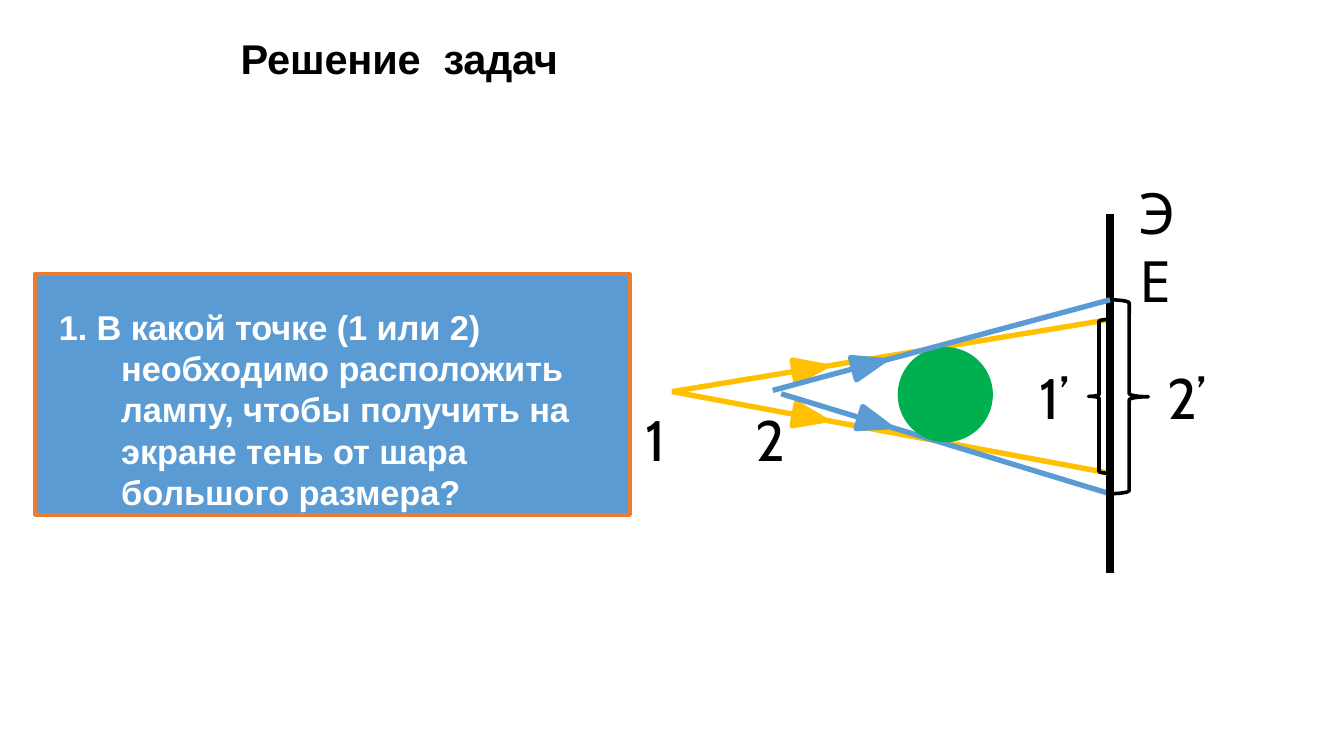
"""Build a slide on the shadow of a ball lit from two lamp positions."""
import math

from lxml import etree
from pptx import Presentation
from pptx import util as u
from pptx.dml.color import RGBColor
from pptx.enum import shapes, text
from pptx.oxml.ns import qn

W, H = u.Inches(15.74), u.Inches(8.85)
BLACK = RGBColor(0x00, 0x00, 0x00)
WHITE = RGBColor(0xFF, 0xFF, 0xFF)
BLUE = RGBColor(0x5B, 0x9B, 0xD4)
ORANGE = RGBColor(0xEC, 0x7C, 0x30)
YELLOW = RGBColor(0xFF, 0xC0, 0x00)
GREEN = RGBColor(0x00, 0xAF, 0x50)
SCREEN = 82.59
HEAD_LENGTH, HEAD_HALF = u.Inches(0.37), u.Inches(0.135)


def col(share):
    """Return a horizontal length for a percentage of the slide width."""
    return u.Emu(round(W * share / 100))


def row(share):
    """Return a vertical length for a percentage of the slide height."""
    return u.Emu(round(H * share / 100))


def box(left, top, width, height):
    """Return a frame from percentages of the slide's size."""
    return col(left), row(top), col(width), row(height)


def paint(sp, fill, line, weight):
    """Set the fill and outline of a shape and drop its shadow."""
    sp.shadow.inherit = False
    if fill is None:
        sp.fill.background()
    else:
        sp.fill.solid()
        sp.fill.fore_color.rgb = fill
    sp.line.color.rgb = line
    sp.line.width = u.Pt(weight)


def write(sp, parts, size, font="Cabin", color=BLACK, bold=False, inset=0.02):
    """Fill a shape with one paragraph of (text, letter spacing) parts."""
    tf = sp.text_frame
    tf.word_wrap = True
    tf.auto_size = text.MSO_AUTO_SIZE.NONE
    tf.vertical_anchor = text.MSO_ANCHOR.TOP
    tf.margin_left = u.Inches(0.01)
    tf.margin_right = tf.margin_bottom = 0
    tf.margin_top = u.Inches(inset)
    p = tf.paragraphs[0]
    p.alignment = text.PP_ALIGN.LEFT
    for words, spacing in parts:
        r = p.add_run()
        r.text = words
        r.font.size, r.font.name, r.font.bold = u.Pt(size), font, bold
        r.font.color.rgb = color
        r._r.get_or_add_rPr().set("spc", str(spacing))
    return p


def add_label(s, parts, frame, tab=None):
    """Add a diagram label with an optional tab stop in inches."""
    p = write(s.shapes.add_textbox(*frame), parts, 48)
    if tab:
        tabs = etree.SubElement(p._p.get_or_add_pPr(), qn("a:tabLst"))
        etree.SubElement(tabs, qn("a:tab"), pos=str(u.Inches(tab)), algn="l")


def add_line(s, x1, y1, x2, y2, color, weight):
    """Add a straight line between two points."""
    line = s.shapes.add_connector(shapes.MSO_CONNECTOR.STRAIGHT, x1, y1, x2, y2)
    line.line.color.rgb = color
    line.line.width = u.Pt(weight)
    etree.SubElement(line._element.spPr, qn("a:effectLst"))


def add_ray(s, left, start, end, tip, color):
    """Add a ray to the screen with an arrowhead part of the way along."""
    x1, y1, x2, y2 = col(left), row(start), col(SCREEN), row(end)
    add_line(s, x1, y1, x2, y2, color, 4.5)
    length = math.hypot(x2 - x1, y2 - y1)
    dx, dy = (x2 - x1) / length, (y2 - y1) / length
    tip_x, tip_y = x1 + tip * (x2 - x1), y1 + tip * (y2 - y1)
    base_x, base_y = tip_x - HEAD_LENGTH * dx, tip_y - HEAD_LENGTH * dy
    corners = [(round(base_x - side * dy), round(base_y + side * dx))
               for side in (HEAD_HALF, -HEAD_HALF)]
    head = s.shapes.build_freeform(round(tip_x), round(tip_y))
    head.add_line_segments(corners, close=True)
    paint(head.convert_to_shape(), color, color, 4.5)


def add_preset(s, kind, frame, fill, line, weight):
    """Add a painted preset shape."""
    sp = s.shapes.add_shape(kind, *frame)
    paint(sp, fill, line, weight)
    return sp


def add_question(s):
    """Add the question panel with its hanging indent."""
    sp = add_preset(s, shapes.MSO_SHAPE.RECTANGLE, box(2.6, 36.27, 44.28, 31.86), BLUE, ORANGE, 3)
    question = ("1. В какой точке (1 или 2) необходимо расположить лампу, "
                "чтобы получить на экране тень от шара большого размера?")
    p = write(sp, [(question, -10)], 29, "Arial", WHITE, True, 0.37)
    p.line_spacing = 1.0
    pPr = p._p.get_or_add_pPr()
    pPr.set("marL", str(u.Inches(1)))
    pPr.set("indent", str(u.Inches(-0.73)))


def add_diagram(s):
    """Add the rays, ball, screen, braces and labels."""
    add_ray(s, 50, 51.8, 42.26, 0.35, YELLOW)
    add_ray(s, 50, 51.8, 62.6, 0.35, YELLOW)
    add_ray(s, 58.13, 52.09, 65.31, 0.33, BLUE)
    add_label(s, [("ЭЕ", 0)], box(84.69, 23.28, 2.99, 18.42))
    add_label(s, [("1\t2", 0)], box(47.97, 53.33, 10.67, 9.38), 1.29)
    add_preset(s, shapes.MSO_SHAPE.OVAL, box(66.84, 45.99, 6.99, 12.43), GREEN, GREEN, 1)
    add_line(s, col(SCREEN), row(28.36), col(SCREEN), row(75.82), BLACK, 6)
    add_preset(s, shapes.MSO_SHAPE.LEFT_BRACE, box(81, 42.26, 1.55, 20.34), None, BLACK, 3)
    add_preset(s, shapes.MSO_SHAPE.RIGHT_BRACE, box(SCREEN, 39.66, 2.86, 25.65), None, BLACK, 3)
    add_label(s, [("1", -10), ("’\t", 0), ("2’", -10)], box(77.26, 47.68, 12.9, 9.38), 1.5)
    add_ray(s, 57.5, 51.64, 39.66, 0.33, BLUE)


def main():
    """Create and save the slide."""
    prs = Presentation()
    prs.slide_width, prs.slide_height = W, H
    s = prs.slides.add_slide(prs.slide_layouts[5])
    title = s.shapes.title
    title.left, title.top, title.width, title.height = box(17.85, 4.18, 31.7, 6.89)
    write(title, [("Решение", -20), (" ", 970), ("задач", -30)], 35, "Arial", bold=True)
    add_question(s)
    add_diagram(s)
    prs.save("out.pptx")


if __name__ == "__main__":
    main()
